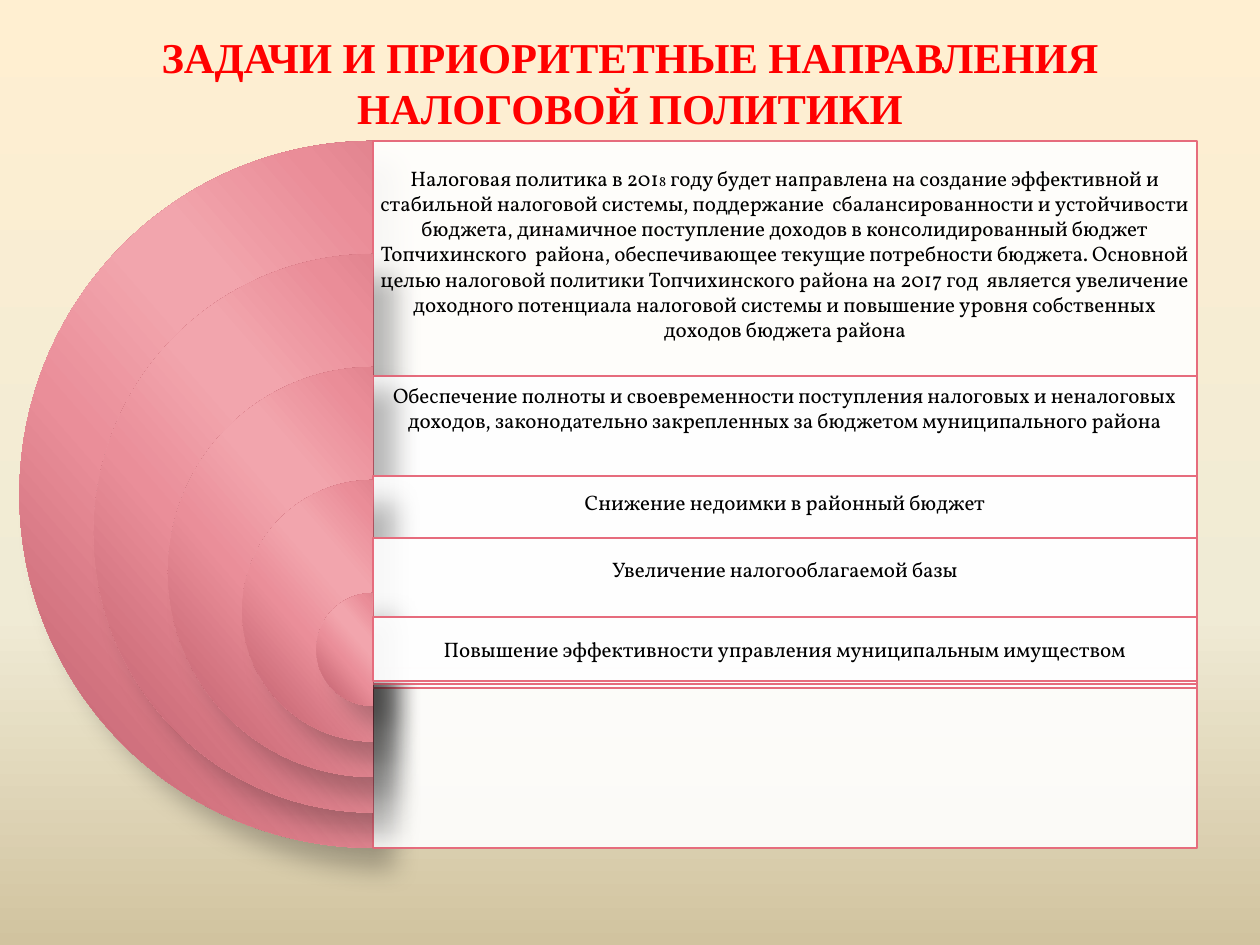
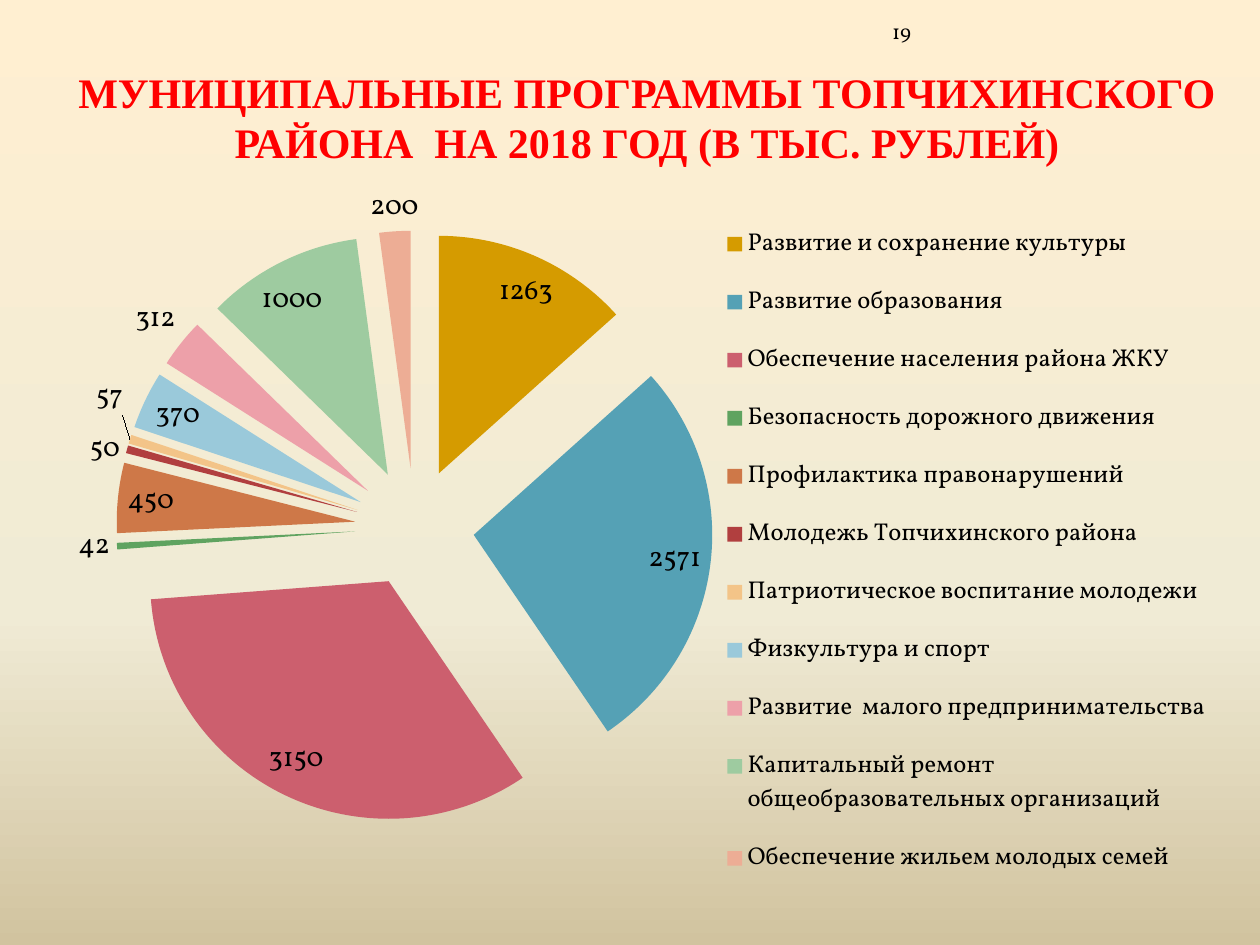
"""Build two slides on tax policy tasks and municipal programmes."""
from pptx import Presentation
from pptx.chart.data import CategoryChartData
from pptx.dml.color import RGBColor
from pptx.enum.chart import XL_CHART_TYPE, XL_LABEL_POSITION, XL_LEGEND_POSITION
from pptx.enum.shapes import MSO_SHAPE
from pptx.enum.text import MSO_ANCHOR, MSO_AUTO_SIZE, PP_ALIGN
from pptx.oxml import parse_xml
from pptx.oxml.ns import nsdecls, qn
from pptx.util import Pt

PIE, RECT = MSO_SHAPE.PIE, MSO_SHAPE.RECTANGLE
MID, LOW = MSO_ANCHOR.MIDDLE, MSO_ANCHOR.BOTTOM
MID_X, LEFT = PP_ALIGN.CENTER, PP_ALIGN.LEFT
FIXED = MSO_AUTO_SIZE.NONE
PIE_CHART = XL_CHART_TYPE.PIE
BEST = XL_LABEL_POSITION.BEST_FIT
RIGHT = XL_LEGEND_POSITION.RIGHT

SCALE = 914400 / 126
HEAD, BODY = "Times New Roman", "Vollkorn"
RED, BLACK, WHITE, ROSE = "FF0000", "000000", "FFFFFF", "E66C7D"
SAND = [(0, "FFEFD1"), (65, "F0EBD5"), (100, "D1C39F")]
PINK = [(0, "B85664"), (33, "EA8D98"), (47, "F2A5AD"),
        (53, "F2A5AD"), (68, "EA8E99"), (100, "B85664")]

TASKS = "ЗАДАЧИ И ПРИОРИТЕТНЫЕ НАПРАВЛЕНИЯ НАЛОГОВОЙ ПОЛИТИКИ"
PLANS = "МУНИЦИПАЛЬНЫЕ ПРОГРАММЫ ТОПЧИХИНСКОГО РАЙОНА  НА 2018 ГОД (В ТЫС. РУБЛЕЙ)"

# top, box height, text height, runs
GOALS = [
    (141, 707, 225, [
        ("Налоговая политика в 201", 12), ("8", 8),
        (" году будет направлена на создание эффективной и стабильной налоговой "
         "системы, поддержание  сбалансированности и устойчивости бюджета, "
         "динамичное поступление доходов в консолидированный бюджет "
         "Топчихинского  района, обеспечивающее текущие потребности бюджета. "
         "Основной целью налоговой политики Топчихинского района на 2017 год  "
         "является увеличение доходного потенциала налоговой системы и повышение "
         "уровня собственных доходов бюджета района", 12)]),
    (376, 312, 64, [
        ("Обеспечение полноты и своевременности поступления налоговых и "
         "неналоговых доходов, законодательно закрепленных за бюджетом "
         "муниципального района", 12)]),
    (476, 192, 53, [("Снижение недоимки в районный бюджет", 12)]),
    (538, 146, 63, [("Увеличение налогооблагаемой базы", 12)]),
    (617, 64, 64, [
        ("Повышение эффективности управления муниципальным имуществом", 12)]),
]
BOX_X, BOX_W = 373, 824
PIE_TOP, PIE_SIZE, TOP_STEP, SIZE_STEP = 141, 707, 113, 148.5

SHARES = [
    ("Развитие и сохранение культуры", 1263, "D59B00"),
    ("Развитие образования", 2571, "55A1B5"),
    ("Обеспечение населения района ЖКУ", 3150, "CC5F6E"),
    ("Безопасность дорожного движения", 42, "5FA360"),
    ("Профилактика правонарушений", 450, "CE7848"),
    ("Молодежь Топчихинского района", 50, "B13F3F"),
    ("Патриотическое воспитание молодежи", 57, "F3C488"),
    ("Физкультура и спорт", 370, "9AC9DA"),
    ("Развитие  малого предпринимательства", 312, "EDA0A9"),
    ("Капитальный ремонт общеобразовательных организаций", 1000, "9ECBA0"),
    ("Обеспечение жильем молодых семей", 200, "EDAD95"),
]
PLOT_AREA = (0.034, 0.058, 0.532, 0.819)
KEY_AREA = (0.567, 0.02, 0.425, 0.96)


def px(*nums):
    return [round(n * SCALE) for n in nums]


def rgb(code):
    return RGBColor.from_string(code)


def style(font, name, size, color, bold=False):
    font.name, font.size, font.bold = name, Pt(size), bold
    font.color.rgb = rgb(color)


def blend(fill, root, stops, angle):
    fill.solid()
    fill.fore_color.rgb = rgb(WHITE)
    old = next(root.iter(qn("a:solidFill")))
    marks = "".join(f'<a:gs pos="{pos * 1000}"><a:srgbClr val="{code}"/></a:gs>'
                    for pos, code in stops)
    old.getparent().replace(old, parse_xml(
        f'<a:gradFill {nsdecls("a")} rotWithShape="1"><a:gsLst>{marks}</a:gsLst>'
        f'<a:lin ang="{angle * 60000}" scaled="0"/></a:gradFill>'))


def add_slide(prs, text, area, size):
    slide = prs.slides.add_slide(prs.slide_layouts[5])
    title = slide.shapes.title
    title.left, title.top, title.width, title.height = px(*area)
    frame = title.text_frame
    frame.text, frame.word_wrap = text, True
    frame.auto_size, frame.vertical_anchor = FIXED, MID
    para = frame.paragraphs[0]
    para.alignment = MID_X
    style(para.runs[0].font, HEAD, size, RED, True)
    return slide


def add_text(slide, area, runs, align, anchor, pad_x, pad_y):
    frame = slide.shapes.add_textbox(*px(*area)).text_frame
    frame.word_wrap, frame.vertical_anchor = True, anchor
    frame.margin_left, frame.margin_right = px(pad_x, pad_x)
    frame.margin_top, frame.margin_bottom = px(pad_y, pad_y)
    para = frame.paragraphs[0]
    para.alignment = align
    for text, size in runs:
        run = para.add_run()
        run.text = text
        style(run.font, BODY, size, BLACK)


def add_pie(slide, rank):
    size = PIE_SIZE - rank * SIZE_STEP
    area = (BOX_X - size / 2, PIE_TOP + rank * TOP_STEP, size, size)
    pie = slide.shapes.add_shape(PIE, *px(*area))
    pie.adjustments[0], pie.adjustments[1] = 54, 162
    blend(pie.fill, pie.element, PINK, 139)
    pie.line.fill.background()
    pie.element.spPr.append(parse_xml(
        f'<a:effectLst {nsdecls("a")}><a:outerShdw blurRad="190500" dist="228600" '
        'dir="2700000" sy="90000" rotWithShape="0"><a:srgbClr val="000000">'
        '<a:alpha val="26000"/></a:srgbClr></a:outerShdw></a:effectLst>'))


def add_box(slide, area):
    box = slide.shapes.add_shape(RECT, *px(*area))
    box.shadow.inherit = False
    box.fill.solid()
    box.fill.fore_color.rgb = rgb(WHITE)
    tint = next(box.element.iter(qn("a:srgbClr")))
    tint.append(parse_xml(f'<a:alpha {nsdecls("a")} val="90000"/>'))
    box.line.color.rgb = rgb(ROSE)
    box.line.width = Pt(0.75)


def layout(area, inner=""):
    spots = "".join(f'<c:{key} val="{val}"/>' for key, val in zip("xywh", area))
    return parse_xml(
        f'<c:layout {nsdecls("c")}><c:manualLayout>{inner}<c:xMode val="edge"/>'
        f'<c:yMode val="edge"/>{spots}</c:manualLayout></c:layout>')


def add_chart(slide, area):
    data = CategoryChartData()
    names, vals, tints = zip(*SHARES)
    data.categories = names
    data.add_series("Series 1", vals)
    chart = slide.shapes.add_chart(PIE_CHART, *px(*area), data).chart
    chart.has_title = False
    style(chart.font, BODY, 10, BLACK)

    chart.has_legend = True
    key = chart.legend
    key.position, key.include_in_layout = RIGHT, False
    style(key.font, BODY, 14, BLACK)
    root = chart.element
    for tag in ("c:plotArea", "c:legend"):
        host = next(root.iter(qn(tag)))
        for old in host.findall(qn("c:layout")):
            host.remove(old)
    next(root.iter(qn("c:plotArea"))).insert(
        0, layout(PLOT_AREA, '<c:layoutTarget val="inner"/>'))
    next(root.iter(qn("c:legendPos"))).addnext(layout(KEY_AREA))

    plot = chart.plots[0]
    plot.vary_by_categories = True
    series = plot.series[0]
    for rank, tint in enumerate(tints):
        fill = series.points[rank].format.fill
        fill.solid()
        fill.fore_color.rgb = rgb(tint)
    series_tx = next(root.iter(qn("c:ser"))).find(qn("c:tx"))
    series_tx.addnext(parse_xml(f'<c:explosion {nsdecls("c")} val="25"/>'))

    plot.has_data_labels = True
    tags = plot.data_labels
    tags.show_value, tags.show_percentage = True, False
    tags.position = BEST
    style(tags.font, BODY, 16, BLACK)


def main():
    prs = Presentation()
    prs.slide_width, prs.slide_height = px(1260, 945)
    master = prs.slide_master
    blend(master.background.fill, master.element, SAND, 90)

    slide = add_slide(prs, TASKS, (63, 28, 1134, 109), 24.3)
    for rank, (top, tall, deep, runs) in enumerate(GOALS):
        add_pie(slide, rank)
        add_box(slide, (BOX_X, top, BOX_W, tall))
        add_text(slide, (BOX_X, top, BOX_W, deep), runs, MID_X, MID, 5, 5)

    slide = add_slide(prs, PLANS, (63, 38, 1168, 158), 24)
    add_text(slide, (892, 10, 347, 40), [("19", 12)], LEFT, LOW, 0, 6)
    add_chart(slide, (69, 186, 1152, 728))
    prs.save("out.pptx")


if __name__ == "__main__":
    main()
